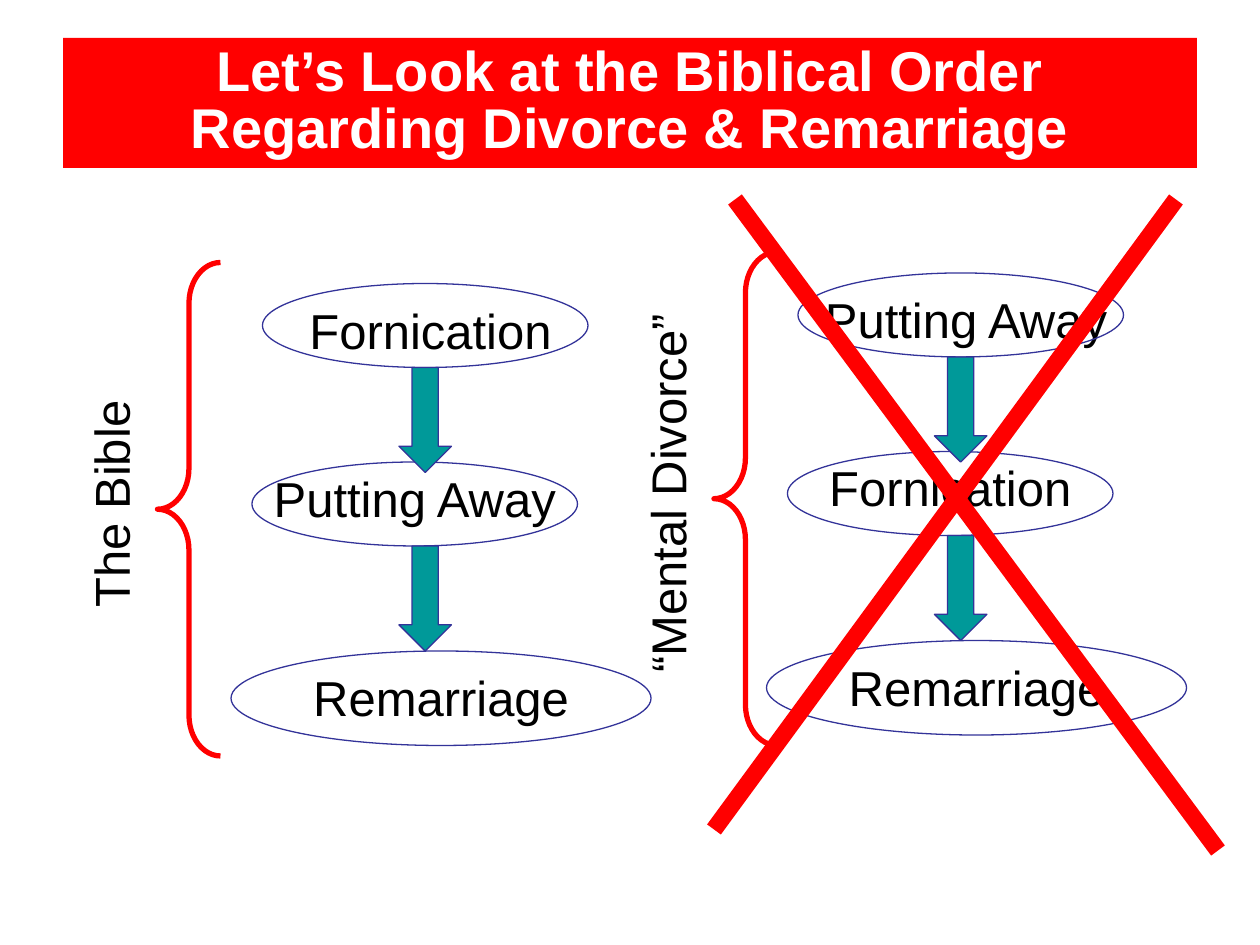
from lxml import etree
from pptx import Presentation
from pptx import util as u
from pptx.dml.color import RGBColor
from pptx.enum import shapes, text
from pptx.oxml.ns import qn

EMU_PER_PX = 7620
FONT = "Arial"
COLORS = {
    "red": "FF0000",
    "teal": "009999",
    "navy": "333399",
    "black": "000000",
    "white": "FFFFFF",
}
ELLIPSES = [(250, 270, 310, 80), (240, 440, 310, 80), (220, 620, 400, 90)]
STEP_TEXTS = [(230, 280, 360, 68), (130, 440, 530, 70), (220, 630, 400, 68)]
ARROWS = [(380, 350, 50, 100), (380, 520, 50, 100)]


def px(value):
    return u.Emu(value * EMU_PER_PX)


def color(name):
    return RGBColor.from_string(COLORS[name])


def format_paragraph(paragraph, size, color_name, bold=False):
    paragraph.alignment = text.PP_ALIGN.CENTER
    for run in paragraph.runs:
        run.font.name = FONT
        run.font.size = u.Pt(size)
        run.font.bold = bold
        run.font.color.rgb = color(color_name)


def set_title(slide, wording, box):
    title = slide.shapes.title
    title.left, title.top, title.width, title.height = map(px, box)
    title.fill.solid()
    title.fill.fore_color.rgb = color("red")
    text_frame = title.text_frame
    text_frame.text = wording
    text_frame.word_wrap = True
    text_frame.auto_size = text.MSO_AUTO_SIZE.NONE
    text_frame.vertical_anchor = text.MSO_ANCHOR.MIDDLE
    paragraph = text_frame.paragraphs[0]
    paragraph.line_spacing = 0.85
    format_paragraph(paragraph, 32, "white", bold=True)


def add_text(parent, wording, box, wrap=True):
    shape = parent.shapes.add_textbox(*map(px, box))
    shape.text_frame.text = wording
    shape.text_frame.word_wrap = wrap
    format_paragraph(shape.text_frame.paragraphs[0], 28, "black")
    return shape


def add_side_label(slide, wording, center_x, center_y, width, height=68):
    box = (center_x - width // 2, center_y - height // 2, width, height)
    add_text(slide, wording, box, wrap=False).rotation = 270


def add_outline(parent, kind, box, line, weight, fill=None):
    shape = parent.shapes.add_shape(kind, *map(px, box))
    shape.shadow.inherit = False
    if fill:
        shape.fill.solid()
        shape.fill.fore_color.rgb = color(fill)
    else:
        shape.fill.background()
    shape.line.color.rgb = color(line)
    shape.line.width = u.Pt(weight)
    return shape


def add_brace(slide, left, top):
    brace = add_outline(slide, shapes.MSO_SHAPE.LEFT_BRACE, (left, top, 60, 470), "red", 3)
    brace.adjustments[0] = 0.65


def add_strike(slide, start, end):
    line = slide.shapes.add_connector(
        shapes.MSO_CONNECTOR.STRAIGHT, *map(px, start + end)
    )
    line.line.color.rgb = color("red")
    line.line.width = u.Pt(9.75)
    etree.SubElement(line._element.spPr, qn("a:effectLst"))


def add_sequence(slide, steps, dx=0, dy=0):
    def moved(box):
        left, top, width, height = box
        return left + dx, top + dy, width, height

    group = slide.shapes.add_group_shape()
    for wording, box in zip(steps, STEP_TEXTS):
        add_text(group, wording, moved(box))
    for box in ELLIPSES:
        add_outline(group, shapes.MSO_SHAPE.OVAL, moved(box), "navy", 0.75)
    for box in ARROWS:
        add_outline(group, shapes.MSO_SHAPE.DOWN_ARROW, moved(box), "navy", 0.75, "teal")


def main():
    presentation = Presentation()
    presentation.slide_width = px(1200)
    presentation.slide_height = px(900)
    slide = presentation.slides.add_slide(presentation.slide_layouts[5])

    set_title(
        slide,
        "Let’s Look at the Biblical Order Regarding Divorce & Remarriage",
        (60, 36, 1080, 124),
    )
    add_sequence(slide, ["Putting Away", "Fornication", "Remarriage"], 510, -10)
    add_strike(slide, (680, 790), (1120, 190))
    add_strike(slide, (700, 190), (1160, 810))
    add_brace(slide, 680, 240)
    add_brace(slide, 150, 250)
    add_side_label(slide, "The Bible", 105, 480, 222)
    add_side_label(slide, "“Mental Divorce”", 635, 470, 368)
    add_sequence(slide, ["Fornication", "Putting Away", "Remarriage"])

    presentation.save("out.pptx")


if __name__ == "__main__":
    main()
